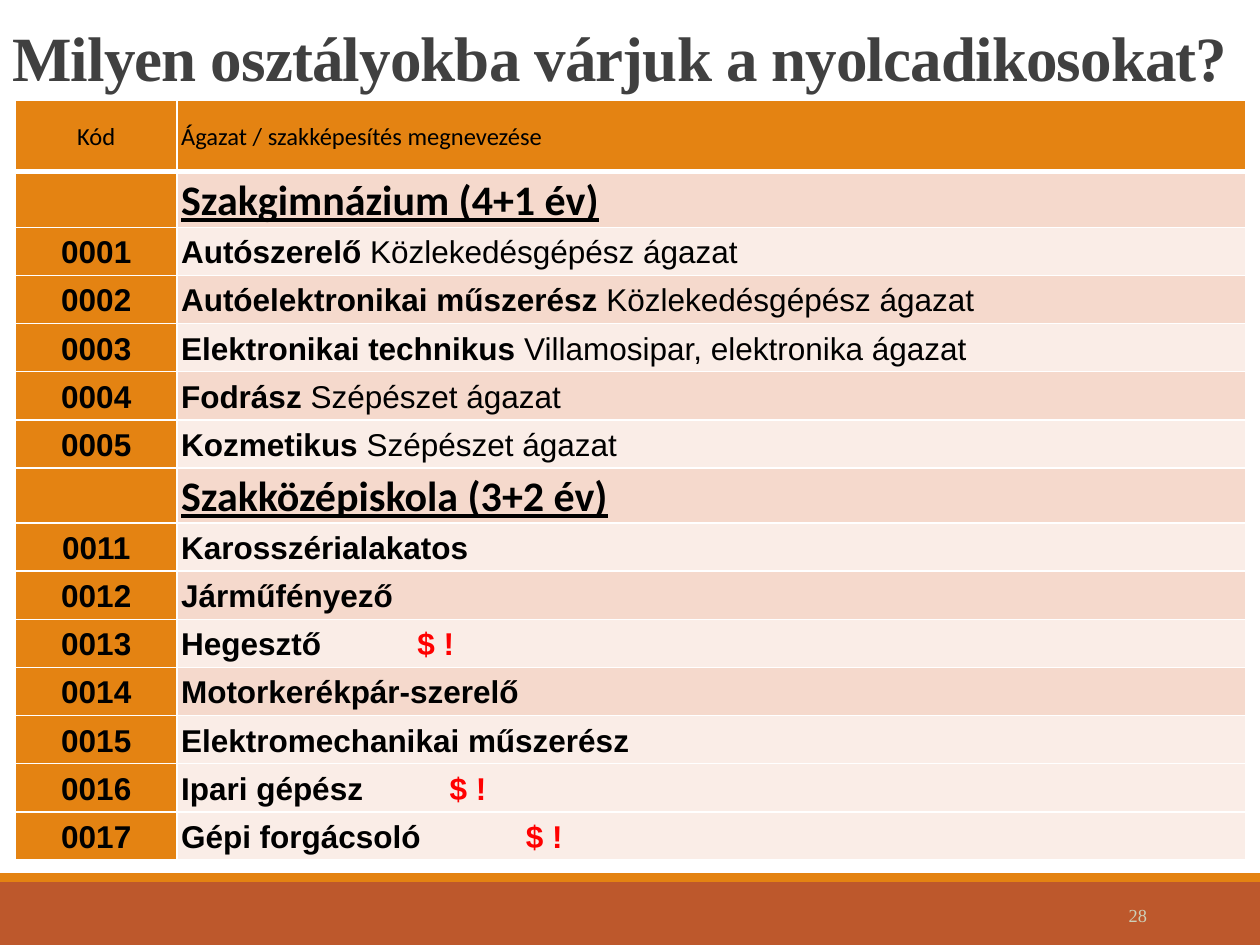
from lxml import etree
from pptx import Presentation
from pptx.dml.color import RGBColor
from pptx.enum import shapes, text
from pptx.oxml import ns
from pptx.util import Pt

ORANGE, RUST, WHITE, BLACK, RED = "E48312", "BD582C", "FFFFFF", "000000", "FF0000"
BAND_DARK, BAND_LIGHT = "F5D9CC", "FAEDE7"
HEADER_HEIGHT, ROW_HEIGHT = 40.5, 27.5
SECTION_HEIGHTS = {"Szakgimnázium (4+1 év)": 32, "Szakközépiskola (3+2 év)": 31.5}

COURSES = [
    ("", "Szakgimnázium (4+1 év)", "", 0),
    ("0001", "Autószerelő", " Közlekedésgépész ágazat", 0),
    ("0002", "Autóelektronikai műszerész", " Közlekedésgépész ágazat", 0),
    ("0003", "Elektronikai technikus", " Villamosipar, elektronika ágazat", 0),
    ("0004", "Fodrász", " Szépészet ágazat", 0),
    ("0005", "Kozmetikus", " Szépészet ágazat", 0),
    ("", "Szakközépiskola (3+2 év)", "", 0),
    ("0011", "Karosszérialakatos", "", 0),
    ("0012", "Járműfényező", "", 0),
    ("0013", "Hegesztő", "", 135),
    ("0014", "Motorkerékpár-szerelő", "", 0),
    ("0015", "Elektromechanikai műszerész", "", 0),
    ("0016", "Ipari gépész", "", 153.5),
    ("0017", "Gépi forgácsoló", "", 197),
]


def color(hex_code):
    """Turn a hex string into a colour."""
    return RGBColor.from_string(hex_code)


def add_text(paragraph, words, font="Arial", size=18, fill=BLACK, bold=False,
             underline=False, spacing=0):
    """Append a formatted run to a paragraph."""
    run = paragraph.add_run()
    run.text = words
    run.font.name, run.font.size = font, Pt(size)
    run.font.bold, run.font.underline = bold, underline
    run.font.color.rgb = color(fill)
    if spacing:
        run.font._element.set("spc", str(int(spacing * 100)))


def add_box(slide, left, top, width, height, anchor):
    """Add a wrapping text box and return its first paragraph."""
    frame = slide.shapes.add_textbox(Pt(left), Pt(top), Pt(width), Pt(height)).text_frame
    frame.word_wrap = True
    frame.vertical_anchor = anchor
    return frame.paragraphs[0]


def add_title(slide, left, top, width, height):
    """Place the slide title."""
    paragraph = add_box(slide, left, top, width, height, text.MSO_ANCHOR.BOTTOM)
    paragraph.line_spacing = 0.85
    add_text(paragraph, "Milyen osztályokba várjuk a nyolcadikosokat?",
             font="Times New Roman", size=36, fill="404040", bold=True, spacing=-0.5)


def add_footer(slide, left, top, width, height):
    """Place the two footer bands and the slide number."""
    stripe = 5
    for offset, thickness, fill in ((stripe, height - stripe, RUST), (0, stripe, ORANGE)):
        band = slide.shapes.add_shape(shapes.MSO_SHAPE.RECTANGLE, Pt(left),
                                      Pt(top + offset), Pt(width), Pt(thickness))
        band.shadow.inherit = False
        band.fill.solid()
        band.fill.fore_color.rgb = color(fill)
        band.line.fill.background()
    paragraph = add_box(slide, left + 584.5, top + 9.5, 78, 28.75, text.MSO_ANCHOR.MIDDLE)
    paragraph.alignment = text.PP_ALIGN.RIGHT
    add_text(paragraph, "28", font="Times New Roman", size=10.5, fill="CCD1B9")


def format_cell(cell, fill, top=1, bottom=1, centered=False):
    """Style a cell and return its paragraph."""
    properties = cell._tc.get_or_add_tcPr()
    for side, weight in (("L", 1), ("R", 1), ("T", top), ("B", bottom)):
        line = etree.SubElement(properties, ns.qn(f"a:ln{side}"), w=str(Pt(weight)))
        solid = etree.SubElement(line, ns.qn("a:solidFill"))
        etree.SubElement(solid, ns.qn("a:srgbClr"), val=WHITE)
    cell.fill.solid()
    cell.fill.fore_color.rgb = color(fill)
    cell.margin_left = cell.margin_right = Pt(2.25)
    cell.margin_top, cell.margin_bottom = Pt(0.5), Pt(0)
    cell.vertical_anchor = text.MSO_ANCHOR.MIDDLE
    paragraph = cell.text_frame.paragraphs[0]
    paragraph.line_spacing = 1.06
    paragraph.alignment = text.PP_ALIGN.CENTER if centered else text.PP_ALIGN.LEFT
    return paragraph


def add_tab_stop(paragraph, position):
    """Give a paragraph one left tab stop."""
    tabs = etree.SubElement(paragraph._p.get_or_add_pPr(), ns.qn("a:tabLst"))
    etree.SubElement(tabs, ns.qn("a:tab"), pos=str(Pt(position)), algn="l")


def fill_course(paragraph, name, branch, mark_position):
    """Write a section heading, or a course with its branch and mark."""
    if name in SECTION_HEIGHTS:
        add_text(paragraph, name, font="Calibri", size=24, bold=True, underline=True)
        return
    if mark_position:
        add_tab_stop(paragraph, mark_position)
    add_text(paragraph, name, bold=True)
    if branch:
        add_text(paragraph, branch)
    if mark_position:
        add_text(paragraph, "\t$ !", fill=RED, bold=True)


def add_course_table(slide, left, top, width, code_width):
    """Place the table of course codes and names."""
    heights = [HEADER_HEIGHT] + [SECTION_HEIGHTS.get(name, ROW_HEIGHT)
                                 for _, name, _, _ in COURSES]
    table = slide.shapes.add_table(len(heights), 2, Pt(left), Pt(top), Pt(width),
                                   Pt(sum(heights))).table
    for column, size in zip(table.columns, (code_width, width - code_width)):
        column.width = Pt(size)
    for row, height in zip(table.rows, heights):
        row.height = Pt(height)
    for index, heading in enumerate(("Kód", "Ágazat / szakképesítés megnevezése")):
        paragraph = format_cell(table.cell(0, index), ORANGE, bottom=3, centered=index == 0)
        add_text(paragraph, heading, font="Calibri", size=14)
    for index, (code, name, branch, mark_position) in enumerate(COURSES, start=1):
        upper = 3 if index == 1 else 1
        paragraph = format_cell(table.cell(index, 0), ORANGE, top=upper, centered=True)
        if code:
            add_text(paragraph, code, bold=True)
        band = BAND_DARK if index % 2 and not mark_position else BAND_LIGHT
        paragraph = format_cell(table.cell(index, 1), band, top=upper)
        fill_course(paragraph, name, branch, mark_position)


def main():
    """Build the slide and save it."""
    presentation = Presentation()
    presentation.slide_width, presentation.slide_height = Pt(720), Pt(540)
    slide = presentation.slides.add_slide(presentation.slide_layouts[6])
    add_footer(slide, 0, 499, 720, 41)
    add_title(slide, 0, 0.75, 720, 57)
    add_course_table(slide, 8.75, 57.5, 703, 92.5)
    presentation.save("out.pptx")


if __name__ == "__main__":
    main()
